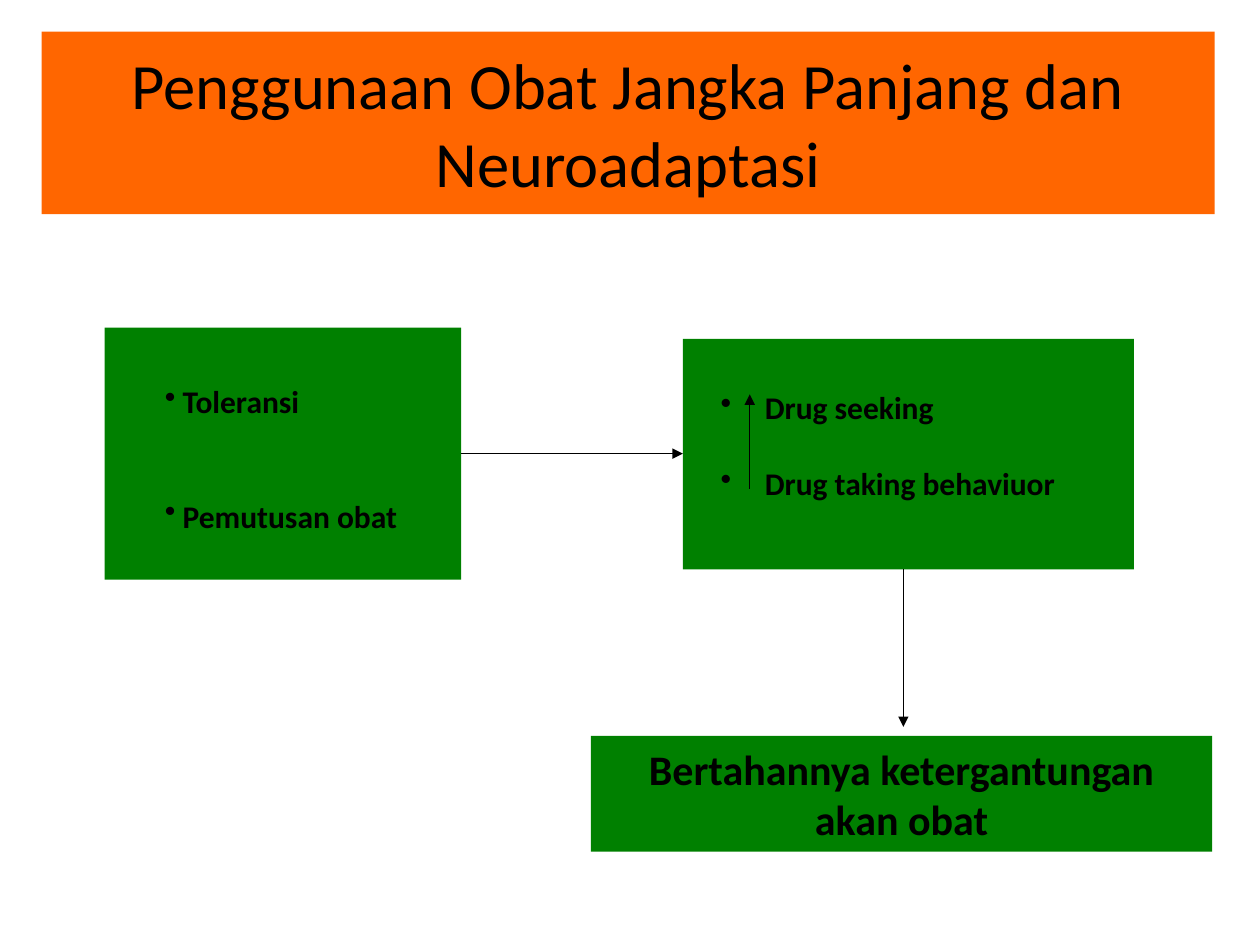
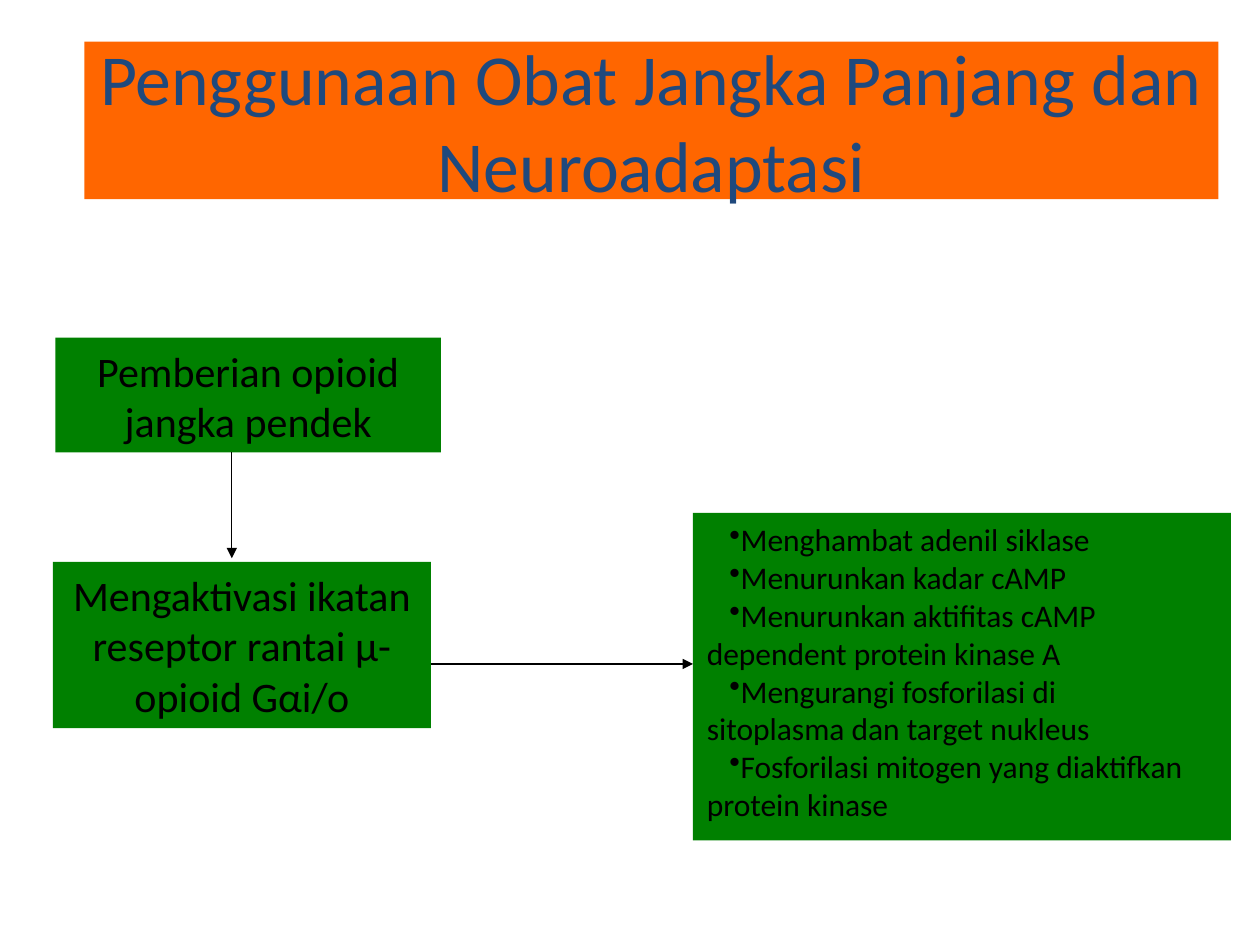
from lxml import etree
from pptx import Presentation
from pptx import util as u
from pptx.dml.color import RGBColor
from pptx.enum import shapes, text
from pptx.oxml import ns

ORANGE = RGBColor(0xFF, 0x66, 0x00)
GREEN = RGBColor(0x00, 0x80, 0x00)
BLACK = RGBColor(0x00, 0x00, 0x00)
NAVY = RGBColor(0x1F, 0x49, 0x7D)
FONT = "Calibri"
TITLE = "Penggunaan Obat Jangka Panjang dan Neuroadaptasi"
CENTER, LEFT = text.PP_ALIGN.CENTER, text.PP_ALIGN.LEFT


def place(part, box):
    """Move a part to a box of left, top, width and height in inches."""
    part.left, part.top, part.width, part.height = map(u.Inches, box)


def write(frame, lines, size, color=BLACK, bold=False, align=CENTER):
    """Fill a text frame with one paragraph per line in a single style."""
    frame.word_wrap = True
    frame.auto_size = text.MSO_AUTO_SIZE.NONE
    frame.text = "\n".join(lines)
    for paragraph in frame.paragraphs:
        paragraph.alignment = align
        font = paragraph.font
        font.name, font.size, font.bold = FONT, u.Pt(size), bold
        font.color.rgb = color


def set_insets(frame):
    """Give a text frame the insets shared by boxes and lists."""
    frame.margin_left = frame.margin_right = u.Inches(0.11)
    frame.margin_top = frame.margin_bottom = u.Inches(0.06)


def set_bullets(frame, margin, indent, gap=0):
    """Turn every paragraph into a bullet with the given indents and gap."""
    for index, paragraph in enumerate(frame.paragraphs):
        paragraph.space_before = u.Pt(gap if index else 0)
        properties = paragraph._p.get_or_add_pPr()
        properties.set("marL", str(u.Inches(margin)))
        properties.set("indent", str(u.Inches(indent)))
        bullet = etree.Element(ns.qn("a:buChar"), char="•")
        properties.insert_element_before(
            bullet, "a:tabLst", "a:defRPr", "a:extLst")


def add_title(slide, box, size, color):
    """Place the slide title on an orange band."""
    title = slide.shapes.title
    place(title, box)
    title.fill.solid()
    title.fill.fore_color.rgb = ORANGE
    title.text_frame.vertical_anchor = text.MSO_ANCHOR.MIDDLE
    write(title.text_frame, [TITLE], size, color)


def add_panel(slide, box):
    """Add a plain green panel and return its text frame."""
    panel = slide.shapes.add_shape(
        shapes.MSO_SHAPE.RECTANGLE, *map(u.Inches, box))
    panel.shadow.inherit = False
    panel.fill.solid()
    panel.fill.fore_color.rgb = GREEN
    panel.line.fill.background()
    frame = panel.text_frame
    frame.vertical_anchor = text.MSO_ANCHOR.TOP
    set_insets(frame)
    return frame


def add_step(slide, box, wording, bold=False):
    """Add a green panel holding one centred statement."""
    write(add_panel(slide, box), [wording], 24, bold=bold)


def add_list_panel(slide, box, inset, items, hanging, gap):
    """Add a green panel with a bold list set in from its top left corner."""
    left, top, width, height = box
    across, down = inset
    add_panel(slide, box)
    listing = slide.shapes.add_textbox(
        *map(u.Inches, (left + across, top + down,
                        width - across, height - down)))
    frame = listing.text_frame
    set_insets(frame)
    write(frame, items, 18, bold=True, align=LEFT)
    set_bullets(frame, hanging, -hanging, gap)


def add_effects(slide, box, items):
    """Add a green panel with bullets indented on their first line."""
    frame = add_panel(slide, box)
    write(frame, items, 18, align=LEFT)
    set_bullets(frame, 0, 0.18)


def add_arrow(slide, start, end):
    """Add a thin black arrow between two points in inches."""
    arrow = slide.shapes.add_connector(
        shapes.MSO_CONNECTOR.STRAIGHT, *map(u.Inches, (*start, *end)))
    arrow.line.color.rgb = BLACK
    arrow.line.width = u.Pt(0.75)
    etree.SubElement(
        arrow.line._get_or_add_ln(), ns.qn("a:tailEnd"), type="triangle")
    etree.SubElement(arrow._element.spPr, ns.qn("a:effectLst"))


def build_dependence(slide):
    """Show how tolerance and withdrawal keep dependence going."""
    adaptation = (0.83, 2.6, 2.83, 2)
    behaviour = (5.42, 2.69, 3.58, 1.83)
    dependence = (4.69, 5.84, 4.93, 0.92)
    add_title(slide, (0.33, 0.25, 9.31, 1.45), 36.9, BLACK)
    add_list_panel(slide, adaptation, (0.37, 0.37),
                   ["Toleransi", "Pemutusan obat"], 0.14, 44)
    add_list_panel(slide, behaviour, (0.19, 0.33),
                   ["Drug seeking", "Drug taking behaviuor"], 0.35, 22)
    add_step(slide, dependence, "Bertahannya ketergantungan akan obat", True)
    left, top, width, height = behaviour
    middle, bottom = left + width / 2 - 0.04, top + height
    add_arrow(slide, (left + 0.53, top + 1.19), (left + 0.53, top + 0.44))
    add_arrow(slide, (adaptation[0] + adaptation[2], 3.6), (left, 3.6))
    add_arrow(slide, (middle, bottom), (middle, dependence[1] - 0.07))


def build_opioid(slide):
    """Show the cell effects of short opioid use."""
    dosing = (0.44, 2.68, 3.06, 0.91)
    receptor = (0.42, 4.46, 3, 1.32)
    effects = (5.5, 4.07, 4.27, 2.6)
    add_title(slide, (0.67, 0.33, 9, 1.25), 41, NAVY)
    add_step(slide, dosing, "Pemberian opioid jangka pendek")
    add_step(slide, receptor,
             "Mengaktivasi ikatan reseptor rantai μ-opioid Gαi/o")
    add_effects(slide, effects, [
        "Menghambat adenil siklase",
        "Menurunkan kadar cAMP",
        "Menurunkan aktifitas cAMP\vdependent protein kinase A",
        "Mengurangi fosforilasi di\vsitoplasma dan target nukleus",
        "Fosforilasi mitogen yang diaktifkan\vprotein kinase",
    ])
    add_arrow(slide, (1.84, dosing[1] + dosing[3]), (1.84, receptor[1] - 0.03))
    add_arrow(slide, (receptor[0] + receptor[2], 5.27), (effects[0], 5.27))


def main():
    """Build both slides and save the deck."""
    deck = Presentation()
    deck.slide_width, deck.slide_height = u.Inches(10), u.Inches(7.5)
    title_only = deck.slide_layouts.get_by_name("Title Only")
    for build in (build_dependence, build_opioid):
        build(deck.slides.add_slide(title_only))
    deck.save("out.pptx")


if __name__ == "__main__":
    main()
